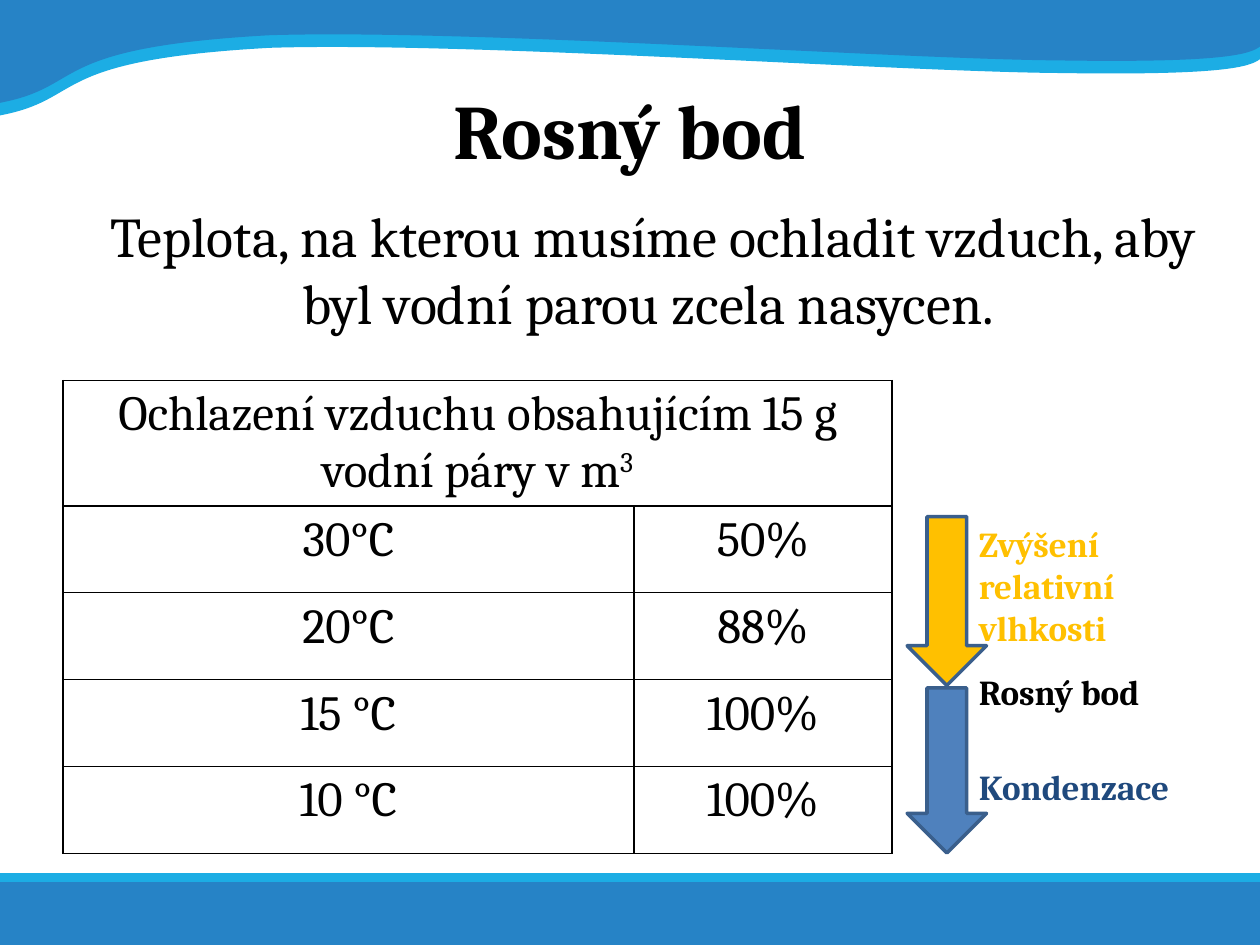
from lxml import etree
from pptx import Presentation, util as u
from pptx.dml.color import RGBColor
from pptx.enum import shapes, text
from pptx.oxml import ns

BLACK = RGBColor(0, 0, 0)
SKY = RGBColor(0x1C, 0xAD, 0xE4)
BLUE = RGBColor(0x26, 0x83, 0xC6)
GOLD = RGBColor(0xFF, 0xC0, 0x00)
STEEL = RGBColor(0x4F, 0x81, 0xBD)
EDGE = RGBColor(0x3A, 0x5F, 0x8C)
NAVY = RGBColor(0x1F, 0x49, 0x7D)
FONT = "Cambria"
MID = text.PP_ALIGN.CENTER

TITLE = "Rosný bod"
LEAD = "Teplota, na kterou musíme ochladit vzduch, aby byl vodní parou zcela nasycen. "
HEAD = ("Ochlazení vzduchu obsahujícím 15 g vodní páry v m", "3")
ROWS = [("30°C", "50%"), ("20°C", "88%"), ("15 °C", "100%"), ("10 °C", "100%")]
COLS = (4.53, 2.05)
HIGH = (0.94, 0.69)
ARROWS = [(4.1, 1.34, GOLD), (5.46, 1.31, STEEL)]
LABELS = [
    ("Zvýšení relativní vlhkosti", 4.1, 1.89, 1.11, GOLD),
    ("Kondenzace", 6.03, 2.05, 0.44, NAVY),
    ("Rosný bod", 5.27, 2.05, 0.44, BLACK),
]
WAVES = [(0, SKY), (-0.1, BLUE)]
BANDS = [(7, 0.5, BLUE), (6.93, 0.07, SKY)]
TOP = [(0, 0.08), (10, 0.1), (10, 0.47)]
CURVES = [
    (9.92, 0.53), (9.72, 0.6), (8.41, 0.58),
    (7.1, 0.57), (3.73, 0.33), (2.14, 0.38),
    (0.33, 0.48), (0.7, 0.79), (-0.02, 0.92),
]


def box(*dims):
    return [u.Inches(d) for d in dims]


def write(para, words, size, color=BLACK, bold=False, align=None):
    para.alignment = align
    run = para.add_run()
    run.text = words
    font = run.font
    font.name, font.size, font.bold = FONT, u.Pt(size), bold
    font.color.rgb = color
    return run


def label(slide, words, dims, size, color, bold=True, align=None):
    frame = slide.shapes.add_textbox(*box(*dims)).text_frame
    frame.word_wrap = True
    frame.auto_size = text.MSO_AUTO_SIZE.SHAPE_TO_FIT_TEXT
    write(frame.paragraphs[0], words, size, color, bold, align)


def paint(shape, color, edge=None):
    shape.shadow.inherit = False
    shape.fill.solid()
    shape.fill.fore_color.rgb = color
    if edge is None:
        shape.line.fill.background()
    else:
        shape.line.color.rgb = edge
        shape.line.width = u.Pt(2)


def wave(slide, shift, color):
    pts = [box(x, y + shift) for x, y in TOP + CURVES]
    form = slide.shapes.build_freeform(*pts[0])
    form.add_line_segments(pts[1:], close=True)
    shape = form.convert_to_shape()
    lines = list(shape._element.iter(ns.qn("a:lnTo")))[len(TOP) - 1:]
    for i in range(0, len(lines), 3):
        curve = etree.Element(ns.qn("a:cubicBezTo"))
        lines[i].addprevious(curve)
        for line in lines[i:i + 3]:
            curve.append(line[0])
            line.getparent().remove(line)
    paint(shape, color)


def style(cell):
    props = cell._tc.get_or_add_tcPr()
    for side in ("lnL", "lnR", "lnT", "lnB"):
        line = etree.SubElement(props, ns.qn("a:" + side), w=str(u.Pt(1)))
        fill = etree.SubElement(line, ns.qn("a:solidFill"))
        etree.SubElement(fill, ns.qn("a:srgbClr"), val=str(BLACK))
    cell.fill.background()


def grid(slide):
    count = len(ROWS) + 1
    table = slide.shapes.add_table(count, 2, *box(0.5, 3.02, 6.58, 3.7)).table
    table.first_row = table.horz_banding = False
    for col, width in zip(table.columns, COLS):
        col.width = u.Inches(width)
    for i, row in enumerate(table.rows):
        row.height = u.Inches(HIGH[min(i, 1)])
        for cell in row.cells:
            style(cell)
    table.cell(0, 0).merge(table.cell(0, 1))
    para = table.cell(0, 0).text_frame.paragraphs[0]
    write(para, HEAD[0], 28, align=MID)
    power = write(para, HEAD[1], 28, align=MID)
    power._r.get_or_add_rPr().set("baseline", "30000")
    for i, row in enumerate(ROWS, 1):
        for j, words in enumerate(row):
            write(table.cell(i, j).text_frame.paragraphs[0], words, 28, align=MID)


def main():
    deck = Presentation()
    deck.slide_width, deck.slide_height = box(10, 7.5)
    slide = deck.slides.add_slide(deck.slide_layouts[5])
    for shift, color in WAVES:
        wave(slide, shift, color)
    for top, high, color in BANDS:
        rect = shapes.MSO_SHAPE.RECTANGLE
        paint(slide.shapes.add_shape(rect, *box(0, top, 10, high)), color)

    title = slide.shapes.title
    slide.shapes._spTree.append(title._element)
    title.left, title.top, title.width, title.height = box(0.5, 0.3, 9, 1.45)
    title.text_frame.vertical_anchor = text.MSO_ANCHOR.MIDDLE
    write(title.text_frame.paragraphs[0], TITLE, 44, bold=True, align=MID)

    grid(slide)
    for top, high, color in ARROWS:
        down = shapes.MSO_SHAPE.DOWN_ARROW
        paint(slide.shapes.add_shape(down, *box(7.2, top, 0.63, high)), color, EDGE)
    for words, top, width, high, color in LABELS:
        label(slide, words, (7.67, top, width, high), 20, color)
    label(slide, LEAD, (0.5, 1.55, 9.38, 1.18), 32, BLACK, False, MID)
    deck.save("out.pptx")


if __name__ == "__main__":
    main()
